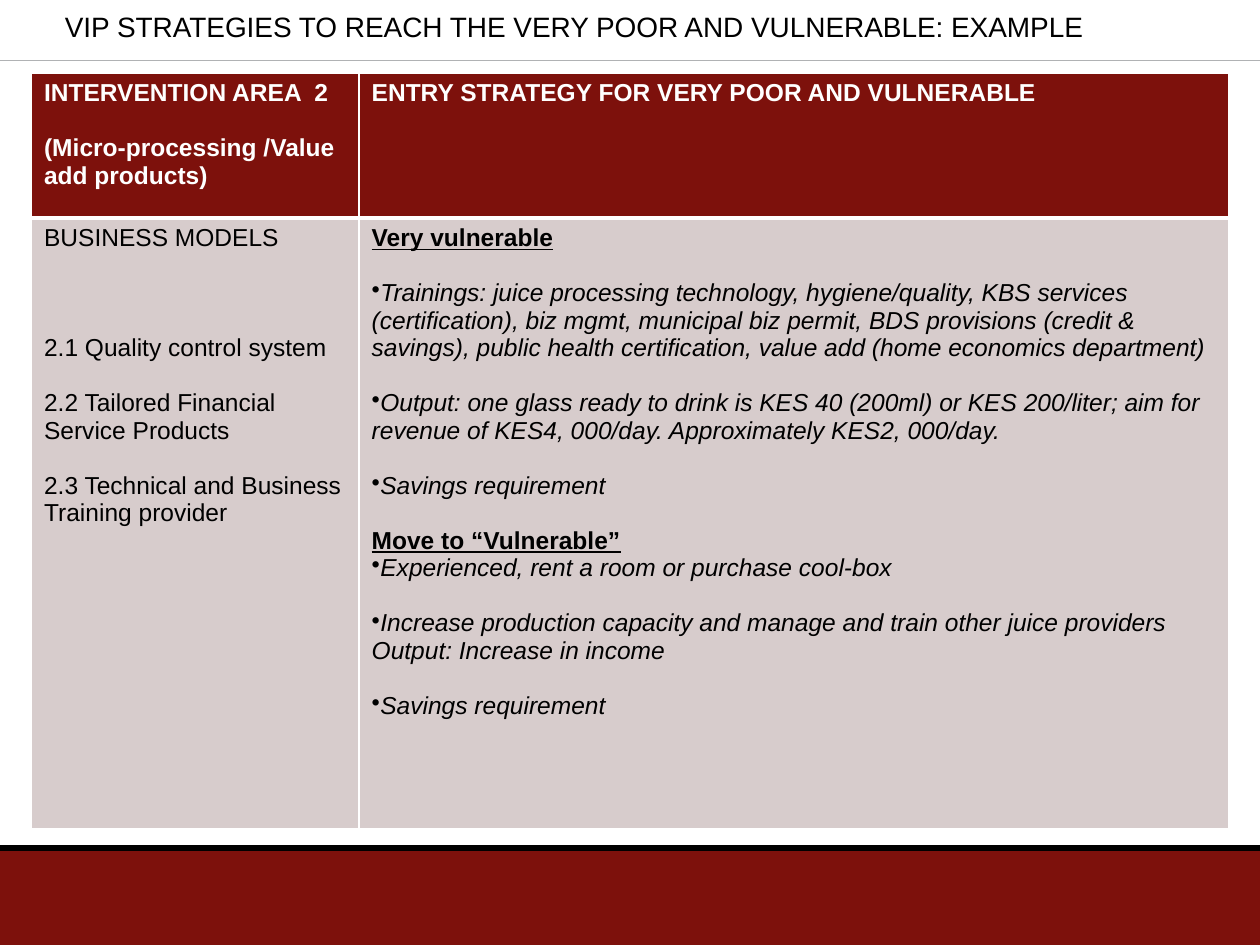
from dataclasses import dataclass

from lxml import etree
from pptx import Presentation
from pptx.dml.color import RGBColor
from pptx.enum.shapes import MSO_CONNECTOR, MSO_SHAPE
from pptx.enum.text import MSO_ANCHOR
from pptx.oxml.ns import qn
from pptx.slide import Slide
from pptx.table import _Cell
from pptx.text.text import _Paragraph
from pptx.util import Pt

RECTANGLE = MSO_SHAPE.RECTANGLE
STRAIGHT = MSO_CONNECTOR.STRAIGHT
MIDDLE = MSO_ANCHOR.MIDDLE

COLORS = {
    "maroon": "7D110C",
    "rose": "D7CCCC",
    "gray": "B0B2B4",
    "black": "000000",
    "white": "FFFFFF",
}
FONT = "Arial"
PAGE_WIDTH, PAGE_HEIGHT = 720, 540
BODY_SIZE = 14
LINE_HEIGHT = 15.7
THIN, THICK = 1, 3


@dataclass(frozen=True)
class Entry:
    text: str
    gap_lines: int = 0
    bold: bool = False
    italic: bool = False
    underline: bool = False
    bullet: bool = False


@dataclass(frozen=True)
class Rule:
    top: float
    color: str
    weight: float


def heading(text: str, gap_lines: int = 0) -> Entry:
    return Entry(text, gap_lines, bold=True, underline=True)


def point(text: str, gap_lines: int = 1) -> Entry:
    return Entry(text, gap_lines, italic=True, bullet=True)


RULES = [Rule(34.56, "gray", 0.75), Rule(484.56, "black", 3.75)]
COLUMN_WIDTHS = [187.2, 496.8]
ROW_HEIGHTS = [82.8, 349.2]
HEADER_ROW = [
    [
        Entry("INTERVENTION AREA  2", bold=True),
        Entry("(Micro-processing /Value add products)", 1, bold=True),
    ],
    [Entry("ENTRY STRATEGY FOR VERY POOR AND VULNERABLE", bold=True)],
]
BODY_ROW = [
    [
        Entry("BUSINESS MODELS"),
        Entry("2.1 Quality control system", 3),
        Entry("2.2 Tailored Financial Service Products", 1),
        Entry("2.3 Technical and Business Training provider", 1),
    ],
    [
        heading("Very vulnerable"),
        point(
            "Trainings: juice processing technology, hygiene/quality, KBS services "
            "(certification), biz mgmt, municipal biz permit, BDS provisions (credit & "
            "savings), public health certification, value add (home economics department)"
        ),
        point(
            "Output: one glass ready to drink is KES 40 (200ml) or KES 200/liter; aim for "
            "revenue of KES4, 000/day. Approximately KES2, 000/day."
        ),
        point("Savings requirement"),
        heading("Move to “Vulnerable”", 1),
        point("Experienced, rent a room or purchase cool-box", 0),
        point("Increase production capacity and manage and train other juice providers"),
        Entry("Output: Increase in income", italic=True),
        point("Savings requirement"),
    ],
]


def rgb(name: str) -> RGBColor:
    return RGBColor.from_string(COLORS[name])


def set_font(para: _Paragraph, size: float, color: str) -> None:
    para.font.name = FONT
    para.font.size = Pt(size)
    para.font.color.rgb = rgb(color)


def add_bullet(para: _Paragraph) -> None:
    properties = para._p.get_or_add_pPr()
    properties.set("marL", "0")
    properties.set("indent", "0")
    bullet = etree.Element(qn("a:buChar"), char="•")
    defaults = properties.find(qn("a:defRPr"))
    defaults.addprevious(bullet)


def set_borders(cell: _Cell, top: float, bottom: float) -> None:
    properties = cell._tc.get_or_add_tcPr()
    weights = {"lnL": THIN, "lnR": THIN, "lnT": top, "lnB": bottom}
    for side, weight in weights.items():
        border = etree.SubElement(properties, qn(f"a:{side}"), w=str(Pt(weight)))
        fill = etree.SubElement(border, qn("a:solidFill"))
        etree.SubElement(fill, qn("a:srgbClr"), val=COLORS["white"])


def fill_cell(cell: _Cell, entries: list[Entry], fill: str, color: str) -> None:
    cell.fill.solid()
    cell.fill.fore_color.rgb = rgb(fill)
    frame = cell.text_frame
    for index, entry in enumerate(entries):
        para = frame.add_paragraph() if index else frame.paragraphs[0]
        para.text = entry.text
        set_font(para, BODY_SIZE, color)
        para.font.bold = entry.bold
        para.font.italic = entry.italic
        para.font.underline = entry.underline
        if entry.gap_lines:
            para.space_before = Pt(entry.gap_lines * LINE_HEIGHT)
        if entry.bullet:
            add_bullet(para)
        for span in para.runs:
            span.font.bold = entry.bold
            span.font.italic = entry.italic
            span.font.underline = entry.underline
            span.font.size = Pt(BODY_SIZE)
            span.font.name = FONT
            span.font.color.rgb = rgb(color)


def add_footer_band(page: Slide) -> None:
    band = page.shapes.add_shape(RECTANGLE, Pt(0), Pt(486), Pt(PAGE_WIDTH), Pt(54))
    band.shadow.inherit = False
    band.fill.solid()
    band.fill.fore_color.rgb = rgb("maroon")
    band.line.fill.background()


def add_rule(page: Slide, rule: Rule) -> None:
    line = page.shapes.add_connector(
        STRAIGHT, Pt(0), Pt(rule.top), Pt(PAGE_WIDTH), Pt(rule.top)
    )
    line.line.color.rgb = rgb(rule.color)
    line.line.width = Pt(rule.weight)
    etree.SubElement(line._element.spPr, qn("a:effectLst"))


def add_strategy_table(page: Slide) -> None:
    table = page.shapes.add_table(
        2, 2, Pt(18), Pt(41.76), Pt(sum(COLUMN_WIDTHS)), Pt(sum(ROW_HEIGHTS))
    ).table
    table.horz_banding = False
    for row, height in zip(table.rows, ROW_HEIGHTS):
        row.height = Pt(height)
    for index, width in enumerate(COLUMN_WIDTHS):
        table.columns[index].width = Pt(width)
        header, body = table.cell(0, index), table.cell(1, index)
        set_borders(header, THIN, THICK)
        set_borders(body, THICK, THIN)
        fill_cell(header, HEADER_ROW[index], "maroon", "white")
        fill_cell(body, BODY_ROW[index], "rose", "black")


def add_title(page: Slide) -> None:
    box = page.shapes.add_textbox(Pt(30), Pt(0), Pt(672), Pt(30))
    frame = box.text_frame
    frame.word_wrap = True
    frame.vertical_anchor = MIDDLE
    para = frame.paragraphs[0]
    para.text = "VIP STRATEGIES TO REACH THE VERY POOR AND VULNERABLE: EXAMPLE"
    set_font(para, 16, "black")


def main() -> None:
    deck = Presentation()
    deck.slide_width, deck.slide_height = Pt(PAGE_WIDTH), Pt(PAGE_HEIGHT)
    page = deck.slides.add_slide(deck.slide_layouts[6])
    add_footer_band(page)
    for rule in RULES:
        add_rule(page, rule)
    add_strategy_table(page)
    add_title(page)
    deck.save("out.pptx")


if __name__ == "__main__":
    main()
